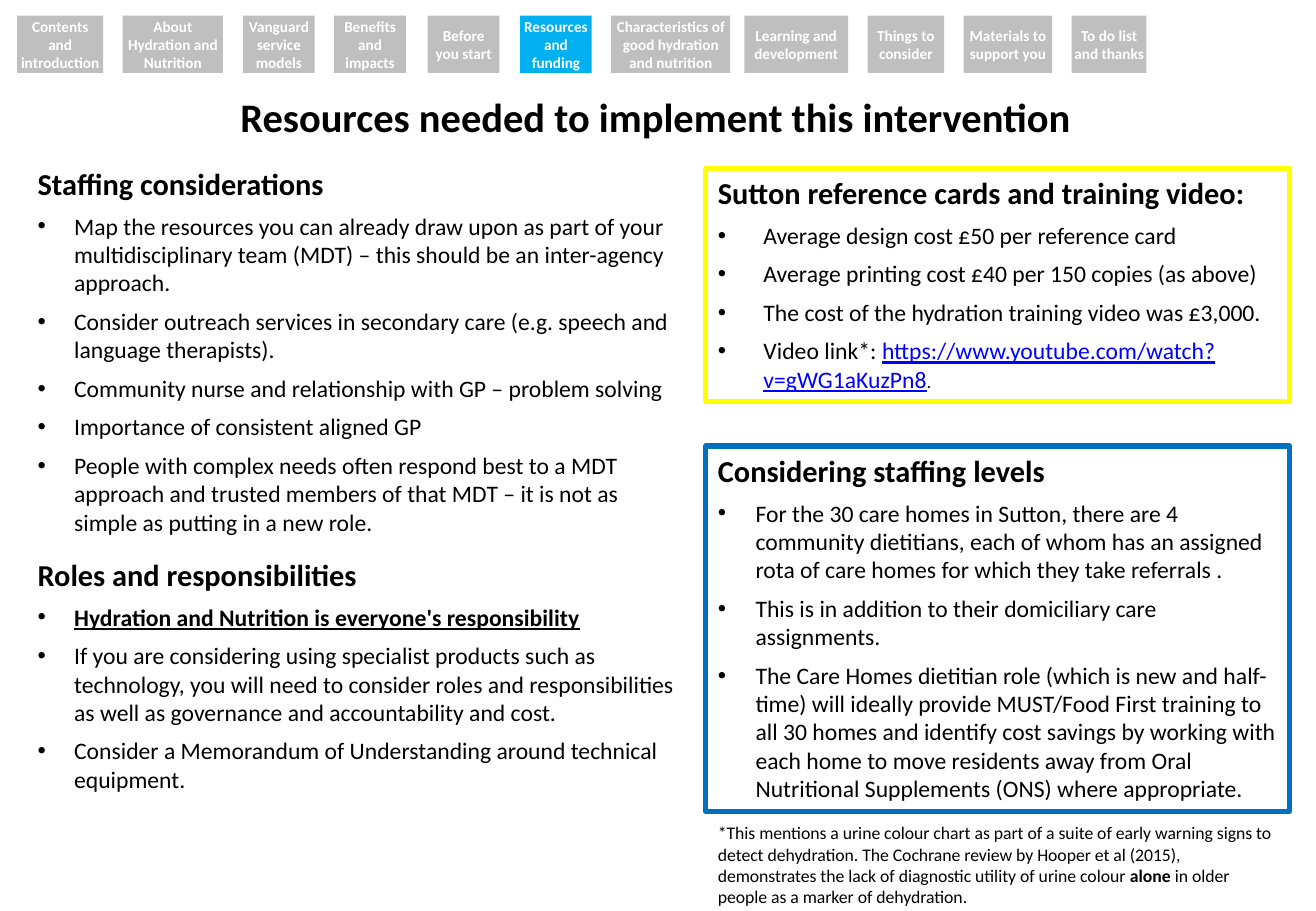
import pptx
import pptx.dml.color
import pptx.enum.shapes
import pptx.enum.text
import pptx.oxml.ns
import pptx.util
from lxml import etree

RGBColor = pptx.dml.color.RGBColor
Pt = pptx.util.Pt
PP_ALIGN = pptx.enum.text.PP_ALIGN
MSO_ANCHOR = pptx.enum.text.MSO_ANCHOR

BLACK = RGBColor(0x00, 0x00, 0x00)
WHITE = RGBColor(0xFF, 0xFF, 0xFF)
TAB_GREY = RGBColor(0xBF, 0xBF, 0xBF)
TAB_ACTIVE = RGBColor(0x00, 0xB0, 0xF0)
YELLOW = RGBColor(0xFF, 0xFF, 0x00)
BLUE = RGBColor(0x00, 0x70, 0xC0)
LINK_BLUE = RGBColor(0x00, 0x00, 0xFF)

FONT = "Calibri"
CELL = pptx.util.Inches(0.1)  # one column or row of the slide grid
COLUMNS, ROWS = 108.3, 75
RIGHT_COLUMN, RIGHT_WIDTH = 58.1, 48

ACTIVE_TAB = "Resources and funding"
TABS = [  # label, first column, width in columns
    ("Contents and introduction", 1.4, 7.1),
    ("About Hydration and Nutrition", 10.1, 8.25),
    ("Vanguard service models", 20, 5.9),
    ("Benefits and impacts", 27.5, 5.9),
    ("Before you start", 35.2, 5.9),
    (ACTIVE_TAB, 42.8, 5.9),
    ("Characteristics of good hydration and nutrition", 50.3, 9.8),
    ("Learning and development", 61.25, 8.55),
    ("Things to consider", 71.4, 6.3),
    ("Materials to support you", 79.3, 7.3),
    ("To do list and thanks", 88.2, 6.15),
]

# Each section is a heading and its bullets; a bullet is a list of (text, format) runs.
STAFFING = ("Staffing considerations", [
    [("Map the resources you can already draw upon as part of your multidisciplinary "
      "team (MDT) – this should be an inter-agency approach.", {})],
    [("Consider outreach services in secondary care (e.g. speech and language "
      "therapists).", {})],
    [("Community nurse and relationship with GP – problem solving", {})],
    [("Importance of consistent aligned GP", {})],
    [("People with complex needs often respond best to a MDT approach and trusted "
      "members of that MDT – it is not as simple as putting in a new role.", {})],
])
ROLES = ("Roles and responsibilities", [
    [("Hydration and Nutrition is everyone's responsibility",
      {"bold": True, "underline": True})],
    [("If you are considering using specialist products such as technology, you will "
      "need to consider roles and responsibilities as well as governance and "
      "accountability and cost.", {})],
    [("Consider a Memorandum of Understanding around technical equipment.", {})],
])
TRAINING_COSTS = ("Sutton reference cards and training video:", [
    [("Average design cost £50 per reference card", {})],
    [("Average printing cost £40 per 150 copies (as above)", {})],
    [("The cost of the hydration training video was £3,000.", {})],
    [("Video link*: ", {}),
     ("https://www.youtube.com/watch?v=gWG1aKuzPn8",
      {"color": LINK_BLUE, "underline": True}),
     (".", {"size": 11})],
])
STAFFING_LEVELS = ("Considering staffing levels", [
    [("For the 30 care homes in Sutton, there are 4 community dietitians, each of whom "
      "has an assigned rota of care homes for which they take referrals .", {})],
    [("This is in addition to their domiciliary care assignments.", {})],
    [("The Care Homes dietitian role (which is new and half-time) will ideally provide "
      "MUST/Food First training to all 30 homes and identify cost savings by working "
      "with each home to move residents away from Oral Nutritional Supplements (ONS) "
      "where appropriate.", {})],
])
FOOTNOTE = [
    ("*This mentions a urine colour chart as part of a suite of early warning signs to "
     "detect dehydration. The Cochrane review by Hooper et al (2015), demonstrates the "
     "lack of diagnostic utility of urine colour ", {}),
    ("alone", {"bold": True}),
    (" in older people as a marker of dehydration.", {}),
]


def grid(*cells):
    return [int(cell * CELL) for cell in cells]


def add_run(paragraph, text, size, color=BLACK, bold=False, underline=False):
    run = paragraph.add_run()
    run.text = text
    run.font.name = FONT
    run.font.size = Pt(size)
    run.font.bold = bold
    run.font.underline = underline
    run.font.color.rgb = color


def add_runs(paragraph, runs, size):
    for text, run_format in runs:
        add_run(paragraph, text, **{"size": size, **run_format})


def set_bullet(paragraph, indent):
    properties = paragraph._p.get_or_add_pPr()
    margin = int(indent * CELL)
    properties.set("marL", str(margin))
    properties.set("indent", str(-margin))
    for tag, name, value in (("a:buFont", "typeface", "Arial"), ("a:buChar", "char", "•")):
        etree.SubElement(properties, pptx.oxml.ns.qn(tag)).set(name, value)


def write_sections(text_frame, sections, indent):
    text_frame.word_wrap = True
    text_frame.vertical_anchor = MSO_ANCHOR.TOP
    for number, (heading, bullets) in enumerate(sections):
        paragraph = text_frame.add_paragraph() if number else text_frame.paragraphs[0]
        paragraph.alignment = PP_ALIGN.LEFT
        if number:
            paragraph.space_before = Pt(12)
        add_run(paragraph, heading, 18, bold=True)
        for runs in bullets:
            paragraph = text_frame.add_paragraph()
            paragraph.alignment = PP_ALIGN.LEFT
            set_bullet(paragraph, indent)
            paragraph.space_before = Pt(6)
            add_runs(paragraph, runs, 14)


def add_rectangle(slide, box):
    shape = slide.shapes.add_shape(pptx.enum.shapes.MSO_SHAPE.RECTANGLE, *grid(*box))
    shape.shadow.inherit = False
    return shape


def add_navigation(slide, top, height):
    for label, left, width in TABS:
        tab = add_rectangle(slide, (left, top, width, height))
        tab.fill.solid()
        tab.fill.fore_color.rgb = TAB_GREY if label != ACTIVE_TAB else TAB_ACTIVE
        tab.line.fill.background()
        text_frame = tab.text_frame
        text_frame.word_wrap = True
        text_frame.vertical_anchor = MSO_ANCHOR.MIDDLE
        text_frame.margin_left = text_frame.margin_right = Pt(1)
        text_frame.margin_top = text_frame.margin_bottom = Pt(1)
        paragraph = text_frame.paragraphs[0]
        paragraph.alignment = PP_ALIGN.CENTER
        add_run(paragraph, label, 9, WHITE, bold=True)


def add_title(slide, box, text):
    title = slide.shapes.title
    title.left, title.top, title.width, title.height = grid(*box)
    title.text_frame.auto_size = pptx.enum.text.MSO_AUTO_SIZE.NONE
    title.text_frame.vertical_anchor = MSO_ANCHOR.MIDDLE
    paragraph = title.text_frame.paragraphs[0]
    paragraph.alignment = PP_ALIGN.CENTER
    add_run(paragraph, text, 24, bold=True)


def add_framed_section(slide, box, section, line_color, indent):
    frame = add_rectangle(slide, box)
    frame.fill.background()
    frame.line.color.rgb = line_color
    frame.line.width = Pt(3)
    write_sections(frame.text_frame, [section], indent)


def add_considerations(slide, box):
    text_box = slide.shapes.add_textbox(*grid(*box))
    write_sections(text_box.text_frame, [STAFFING, ROLES], 3)


def add_footnote(slide, box):
    text_box = slide.shapes.add_textbox(*grid(*box))
    text_box.text_frame.word_wrap = True
    add_runs(text_box.text_frame.paragraphs[0], FOOTNOTE, 10.5)


def main():
    presentation = pptx.Presentation()
    presentation.slide_width, presentation.slide_height = grid(COLUMNS, ROWS)
    slide = presentation.slides.add_slide(presentation.slide_layouts.get_by_name("Title Only"))
    add_title(slide, (0, 6.1, 107.9, 7), "Resources needed to implement this intervention")
    add_considerations(slide, (2.12, 13.1, 54.4, 52))
    add_framed_section(slide, (RIGHT_COLUMN, 13.85, RIGHT_WIDTH, 19.2),
                       TRAINING_COSTS, YELLOW, 3.75)
    add_framed_section(slide, (RIGHT_COLUMN, 36.72, RIGHT_WIDTH, 30.1),
                       STAFFING_LEVELS, BLUE, 3.1)
    add_footnote(slide, (RIGHT_COLUMN, 67.2, RIGHT_WIDTH, 7.7))
    add_navigation(slide, 1.3, 4.7)
    presentation.save("out.pptx")


if __name__ == "__main__":
    main()
